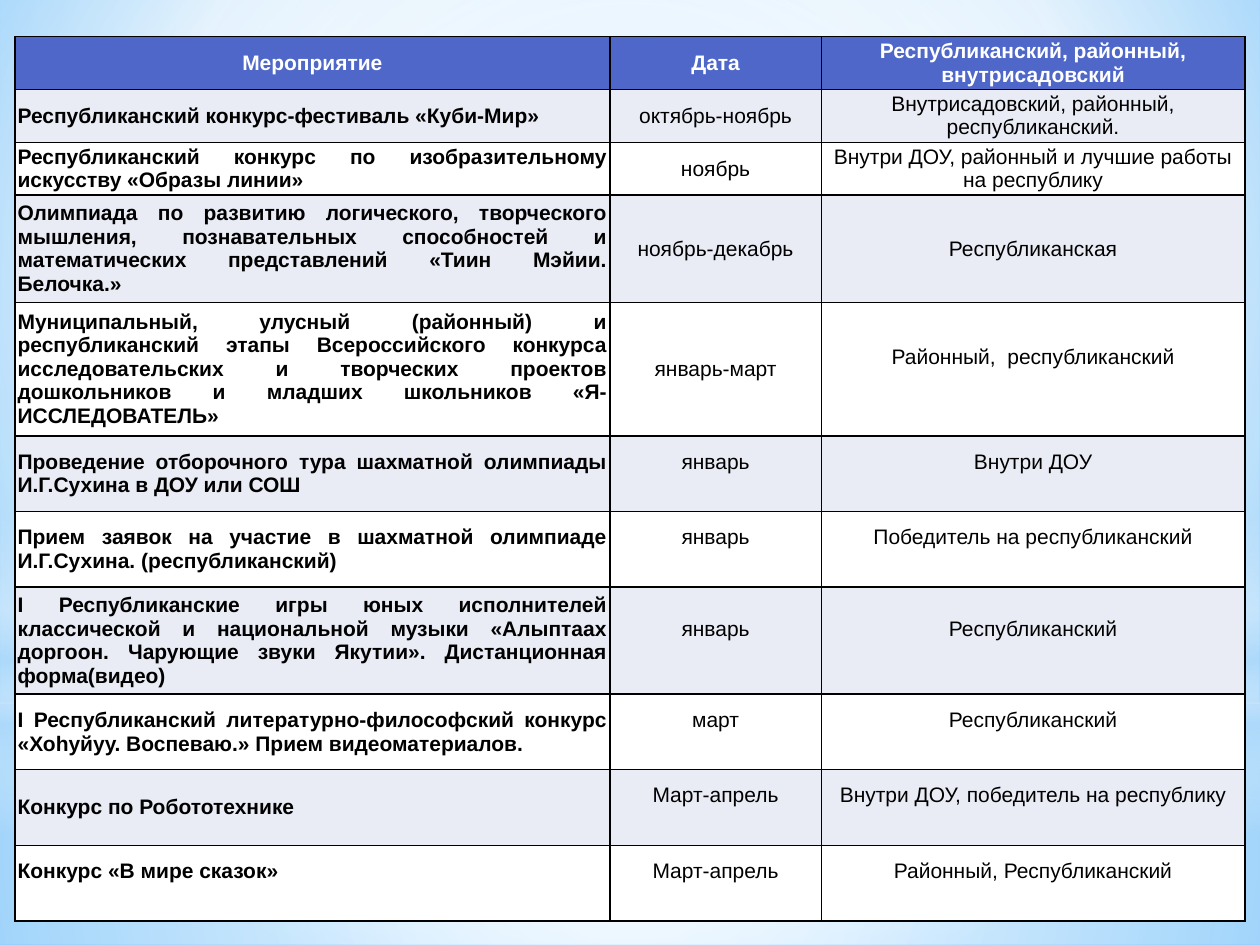
import pptx
import pptx.dml.color
import pptx.enum.shapes
import pptx.enum.text
import pptx.oxml
import pptx.oxml.ns
import pptx.util
from pptx.util import Inches

COLORS = {"header": "4E67C8", "band": "E9EBF5", "white": "FFFFFF", "black": "000000",
          "sky": "9ED5FF", "deep_sky": "5BB9FF", "haze": "B4DCFA"}
FONT = "Arial"
ALIGN = pptx.enum.text.PP_ALIGN
SHAPE = pptx.enum.shapes.MSO_SHAPE
NS = pptx.oxml.ns.nsdecls("a")

HEADER = ["Мероприятие", "Дата", "Республиканский, районный, внутрисадовский"]
# Event, date, level, row height, columns whose text is raised
EVENTS = [
    ("Республиканский конкурс-фестиваль «Куби-Мир»", "октябрь-ноябрь",
     "Внутрисадовский, районный, республиканский.", 0.42, ()),
    ("Республиканский конкурс по изобразительному искусству «Образы линии»", "ноябрь",
     "Внутри ДОУ, районный и лучшие работы на республику", 0.42, ()),
    ("Олимпиада по развитию логического, творческого мышления, познавательных способностей "
     "и математических представлений «Тиин Мэйии. Белочка.»", "ноябрь-декабрь",
     "Республиканская", 0.85, ()),
    ("Муниципальный, улусный (районный) и республиканский этапы Всероссийского конкурса "
     "исследовательских и творческих проектов дошкольников и младших школьников "
     "«Я-ИССЛЕДОВАТЕЛЬ»", "январь-март", "Районный,  республиканский", 1.06, (2,)),
    ("Проведение отборочного тура шахматной олимпиады И.Г.Сухина в ДОУ или СОШ", "январь",
     "Внутри ДОУ", 0.6, (1, 2)),
    ("Прием заявок на участие в шахматной олимпиаде И.Г.Сухина. (республиканский)", "январь",
     "Победитель на республиканский", 0.6, (1, 2)),
    ("I Республиканские игры юных исполнителей классической и национальной музыки "
     "«Алыптаах доргоон. Чарующие звуки Якутии». Дистанционная форма(видео)", "январь",
     "Республиканский", 0.85, (1, 2)),
    ("I Республиканский литературно-философский конкурс «Хоhуйуу. Воспеваю.» "
     "Прием видеоматериалов.", "март", "Республиканский", 0.6, (1, 2)),
    ("Конкурс по Робототехнике", "Март-апрель",
     "Внутри ДОУ, победитель на республику", 0.6, (1, 2)),
    ("Конкурс «В мире сказок»", "Март-апрель", "Районный, Республиканский", 0.6, (0, 1, 2)),
]


def rgb(name):
    return pptx.dml.color.RGBColor.from_string(COLORS[name])


def set_gradient(fill_parent, stops, focus=None):
    """Replace a gradient; stops are (position, colour, opacity), focus is l, t, r, b."""
    stop_xml = "".join(
        f'<a:gs pos="{pos * 1000}"><a:srgbClr val="{COLORS[color]}">'
        f'<a:alpha val="{opacity * 1000}"/></a:srgbClr></a:gs>'
        for pos, color, opacity in stops)
    if focus:
        edges = " ".join(f'{side}="{value * 1000}"' for side, value in zip("ltrb", focus))
        direction = f'<a:path path="circle"><a:fillToRect {edges}/></a:path>'
    else:
        direction = '<a:lin ang="5400000" scaled="0"/>'
    gradient = pptx.oxml.parse_xml(
        f'<a:gradFill {NS} rotWithShape="1"><a:gsLst>{stop_xml}</a:gsLst>{direction}</a:gradFill>')
    old = fill_parent.find(".//" + pptx.oxml.ns.qn("a:gradFill"))
    old.getparent().replace(old, gradient)


def add_glow(slide, shape_type, left, top, width, height, stops, focus=None):
    glow = slide.shapes.add_shape(
        shape_type, Inches(left), Inches(top), Inches(width), Inches(height))
    glow.shadow.inherit = False
    glow.line.fill.background()
    glow.fill.gradient()
    set_gradient(glow._element.spPr, stops, focus)


def add_sky(slide, left, top, width, height):
    slide.background.fill.gradient()
    set_gradient(slide._element.cSld.find(pptx.oxml.ns.qn("p:bg")),
                 [(0, "sky", 100), (60, "white", 100), (100, "deep_sky", 100)],
                 (20, 10, 20, 60))
    center = (50, 50, 50, 50)
    # Lower and upper haze
    add_glow(slide, SHAPE.RECTANGLE, left, top + 5.58, width, height - 5.58,
             [(0, "white", 91), (37, "white", 76), (100, "haze", 79)], center)
    add_glow(slide, SHAPE.RECTANGLE, left, top, width, 5.58,
             [(0, "white", 89), (48, "white", 62), (100, "haze", 79)], center)
    # Horizon band and central light
    add_glow(slide, SHAPE.RECTANGLE, left, top + 4.12, width, 2.5,
             [(0, "white", 0), (29, "white", 30), (45, "haze", 40),
              (55, "white", 26), (65, "haze", 60), (100, "white", 0)])
    add_glow(slide, SHAPE.OVAL, left, top + 1.75, width, 5.58,
             [(0, "white", 100), (56, "white", 0)], center)


def write_text(frame, text, *, color="black", bold=False, align=ALIGN.CENTER, size=12):
    paragraph = frame.paragraphs[0]
    paragraph.alignment = align
    run = paragraph.add_run()
    run.text = text
    run.font.name = FONT
    run.font.size = pptx.util.Pt(size)
    run.font.bold = bold
    run.font.color.rgb = rgb(color)


def style_cell(cell, fill, raised=False):
    cell.vertical_anchor = pptx.enum.text.MSO_ANCHOR.MIDDLE
    cell.margin_left = cell.margin_right = Inches(0.02)
    cell.margin_top = 0
    cell.margin_bottom = Inches(0.19 if raised else 0)
    cell.fill.solid()
    cell.fill.fore_color.rgb = rgb(fill)
    properties = cell._tc.get_or_add_tcPr()
    for index, side in enumerate(("lnL", "lnR", "lnT", "lnB")):
        properties.insert(index, pptx.oxml.parse_xml(
            f'<a:{side} {NS} w="12700"><a:solidFill><a:srgbClr val="{COLORS["black"]}"/>'
            f'</a:solidFill></a:{side}>'))


def add_events_table(slide, left, top, width, height):
    schedule = slide.shapes.add_table(
        len(EVENTS) + 1, len(HEADER),
        Inches(left), Inches(top), Inches(width), Inches(height)).table
    for column, share in zip(schedule.columns, (4.72, 1.68, 3.36)):
        column.width = Inches(share)

    # Header
    schedule.rows[0].height = Inches(0.42)
    for cell, title in zip(schedule.rows[0].cells, HEADER):
        style_cell(cell, "header")
        write_text(cell.text_frame, title, color="white", bold=True)

    # Events in alternating bands
    for number, (*texts, row_height, raised) in enumerate(EVENTS, start=1):
        schedule.rows[number].height = Inches(row_height)
        for column, text in enumerate(texts):
            cell = schedule.cell(number, column)
            style_cell(cell, "band" if number % 2 else "white", column in raised)
            write_text(cell.text_frame, text, bold=column == 0,
                       align=ALIGN.CENTER if column else ALIGN.JUSTIFY)


def main():
    deck = pptx.Presentation()
    deck.slide_width, deck.slide_height = Inches(10), Inches(7.5)
    slide = deck.slides.add_slide(deck.slide_layouts[6])
    add_sky(slide, 0, 0, 10, 7.5)
    add_events_table(slide, 0.12, 0.29, 9.76, 7.01)
    deck.save("out.pptx")


if __name__ == "__main__":
    main()
